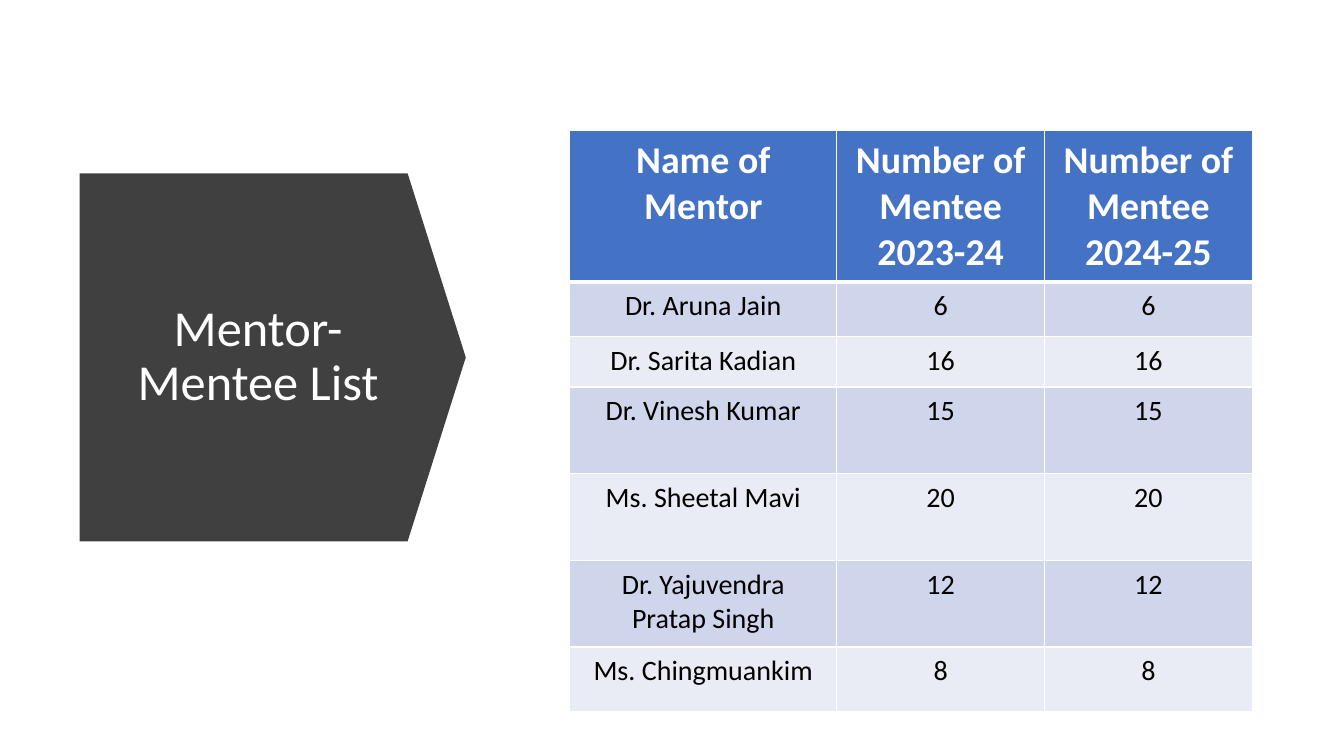
from dataclasses import dataclass

from lxml.etree import SubElement
from pptx import Presentation
from pptx.dml.color import RGBColor
from pptx.enum.shapes import MSO_SHAPE as Preset
from pptx.enum.text import MSO_ANCHOR as Anchor, MSO_AUTO_SIZE as AutoSize, PP_ALIGN as Align
from pptx.oxml.ns import qn
from pptx.util import Inches, Pt


@dataclass(frozen=True)
class Theme:
    font: str = "Calibri"
    white: str = "FFFFFF"
    black: str = "000000"
    arrow: str = "404040"
    header: str = "4472C4"
    bands: tuple = ("CFD5EA", "E9EBF5")
    title_size: int = 36
    header_size: int = 27
    body_size: int = 20
    border: int = 1
    header_border: int = 3


THEME = Theme()
HEADER = ("Name of Mentor", "Number of Mentee\n2023-24", "Number of Mentee\n2024-25")
MENTORS = (
    ("Dr. Aruna Jain", 6, 6),
    ("Dr. Sarita Kadian", 16, 16),
    ("Dr. Vinesh Kumar", 15, 15),
    ("Ms. Sheetal Mavi", 20, 20),
    ("Dr. Yajuvendra Pratap Singh", 12, 12),
    ("Ms. Chingmuankim", 8, 8),
)
COLUMN_WIDTHS = (2.65, 2.06, 2.06)
ROW_HEIGHTS = (1.49, 0.54, 0.5, 0.86, 0.86, 0.86, 0.64)


def apply_format(target, values):
    for name, value in values.items():
        setattr(target, name, value)


def place(shape, left, top, width, height):
    bounds = {"left": left, "top": top, "width": width, "height": height}
    apply_format(shape, {name: Inches(value) for name, value in bounds.items()})


def fill_solid(target, color):
    target.fill.solid()
    target.fill.fore_color.rgb = RGBColor.from_string(color)


def write_text(frame, text, size, color, bold=False, **spacing):
    frame.text = text
    for paragraph in frame.paragraphs:
        apply_format(paragraph, {"alignment": Align.CENTER, **spacing})
        for run in paragraph.runs:
            apply_format(run.font, {"name": THEME.font, "size": Pt(size), "bold": bold})
            run.font.color.rgb = RGBColor.from_string(color)


def add_title(slide, text):
    title = slide.shapes.title
    place(title, 1.12, 2.15, 2.88, 2.79)
    write_text(title.text_frame, text, THEME.title_size, THEME.white,
               line_spacing=0.9, space_after=Pt(6))
    apply_format(title.text_frame, {
        "word_wrap": True, "auto_size": AutoSize.NONE, "vertical_anchor": Anchor.MIDDLE,
    })
    return title


def add_arrow_behind(slide, title):
    arrow = slide.shapes.add_shape(
        Preset.DOWN_ARROW, Inches(0.88), Inches(1.63), Inches(3.65), Inches(3.83))
    arrow.adjustments[0] = 1
    arrow.adjustments[1] = 0.158
    arrow.rotation = 270
    arrow.shadow.inherit = False
    fill_solid(arrow, THEME.arrow)
    arrow.line.fill.background()
    title.element.addprevious(arrow.element)


def add_borders(cell, top, bottom):
    properties = cell._tc.get_or_add_tcPr()
    widths = {"lnL": THEME.border, "lnR": THEME.border, "lnT": top, "lnB": bottom}
    for side, width in widths.items():
        line = SubElement(properties, qn(f"a:{side}"), w=str(Pt(width)))
        SubElement(SubElement(line, qn("a:solidFill")), qn("a:srgbClr"), val=THEME.white)


def format_cell(cell, text, row_index):
    is_header = row_index == 0
    apply_format(cell, {
        "margin_left": Inches(0.15), "margin_right": Inches(0.15),
        "margin_top": Inches(0.07), "margin_bottom": Inches(0.07),
        "vertical_anchor": Anchor.TOP,
    })
    add_borders(cell,
                top=THEME.header_border if row_index == 1 else THEME.border,
                bottom=THEME.header_border if is_header else THEME.border)
    fill_solid(cell, THEME.header if is_header else THEME.bands[(row_index - 1) % 2])
    if is_header:
        write_text(cell.text_frame, text, THEME.header_size, THEME.white, bold=True)
    else:
        write_text(cell.text_frame, text, THEME.body_size, THEME.black)


def add_mentor_table(slide):
    rows = (HEADER, *MENTORS)
    table = slide.shapes.add_table(
        len(rows), len(HEADER), Inches(5.65), Inches(1.29),
        Inches(sum(COLUMN_WIDTHS)), Inches(sum(ROW_HEIGHTS))).table
    for column, width in zip(table.columns, COLUMN_WIDTHS):
        column.width = Inches(width)
    for row, height in zip(table.rows, ROW_HEIGHTS):
        row.height = Inches(height)
    for row_index, values in enumerate(rows):
        for column_index, value in enumerate(values):
            format_cell(table.cell(row_index, column_index), str(value), row_index)


def main():
    presentation = Presentation()
    apply_format(presentation, {"slide_width": Inches(13.33), "slide_height": Inches(7.5)})
    slide = presentation.slides.add_slide(presentation.slide_layouts.get_by_name("Title Only"))
    fill_solid(slide.background, THEME.white)
    title = add_title(slide, "Mentor- Mentee List")
    add_arrow_behind(slide, title)
    add_mentor_table(slide)
    presentation.save("out.pptx")


if __name__ == "__main__":
    main()
